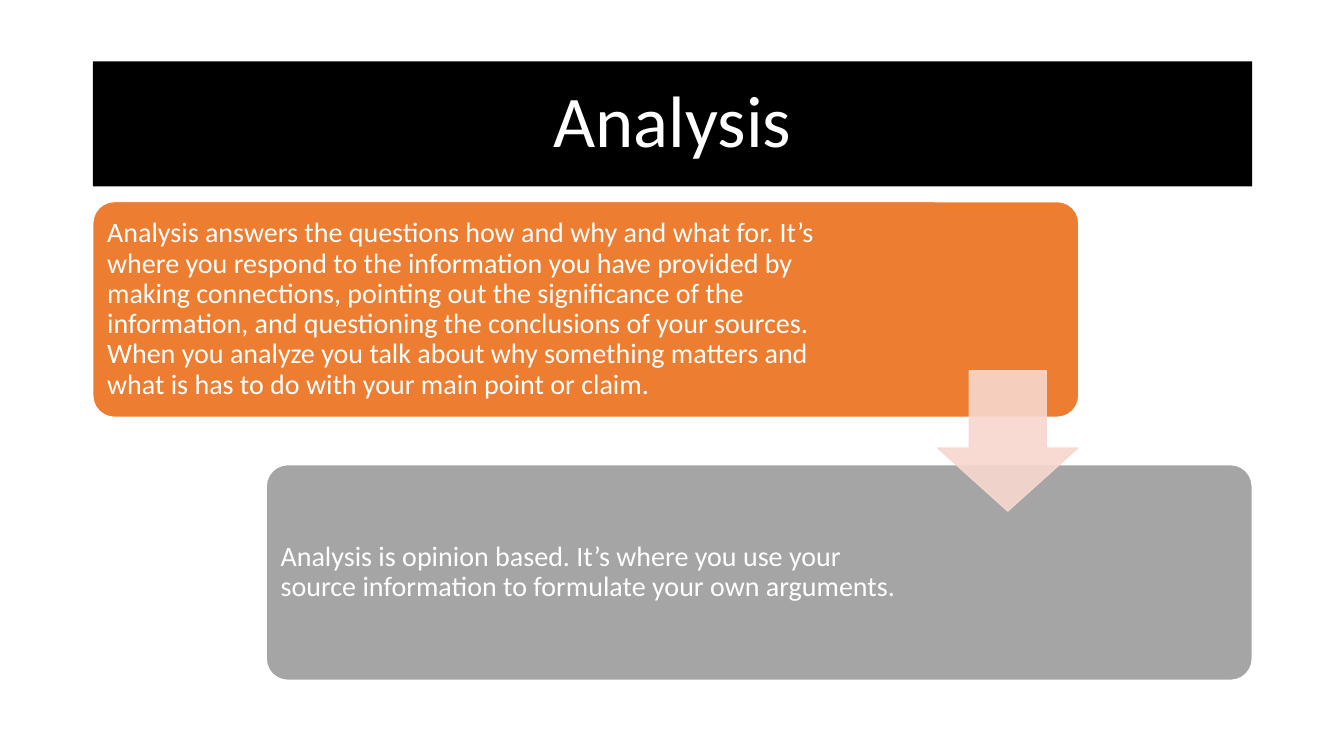
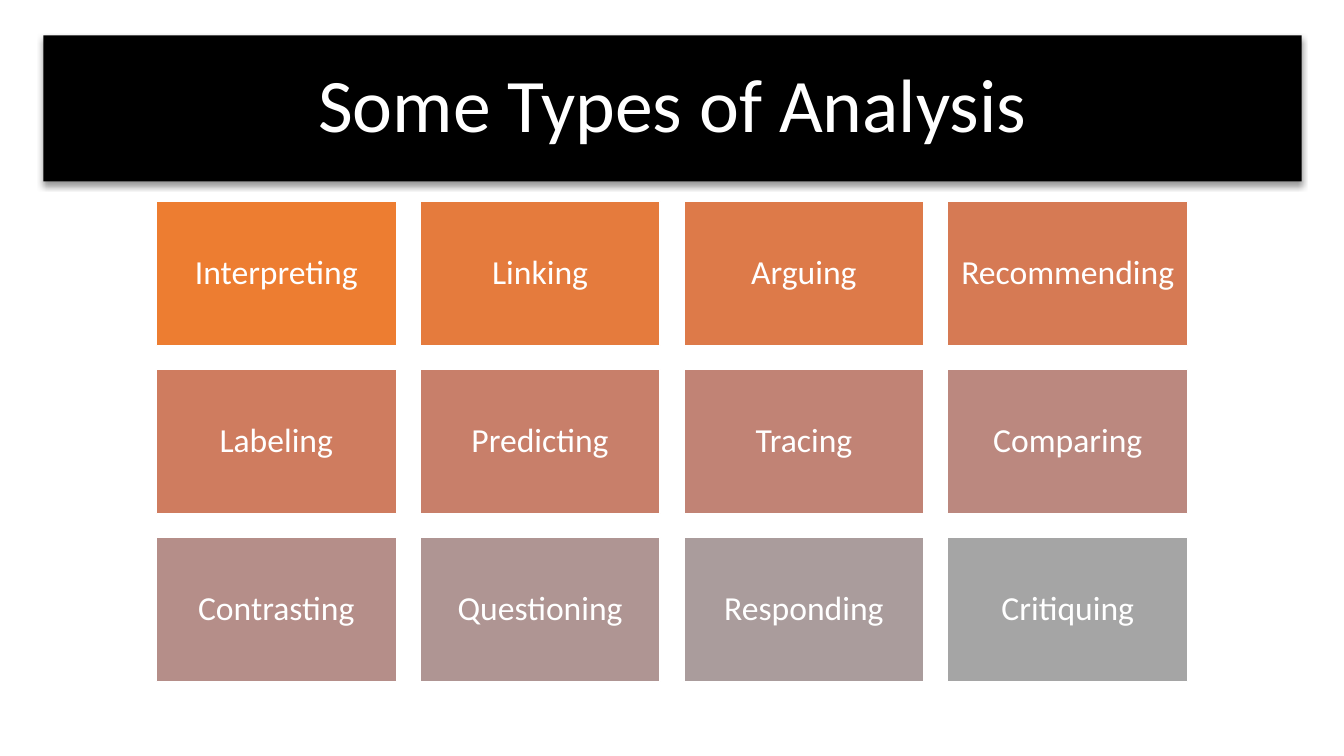
from colorsys import hls_to_rgb, rgb_to_hls
from dataclasses import dataclass

from lxml.etree import SubElement
from pptx import Presentation
from pptx.dml.color import RGBColor
from pptx.enum.shapes import MSO_SHAPE
from pptx.enum.text import MSO_ANCHOR, MSO_AUTO_SIZE, PP_ALIGN
from pptx.oxml.ns import qn
from pptx.util import Inches, Pt


@dataclass(frozen=True)
class Theme:
    font: str = "Calibri"
    band: RGBColor = RGBColor(0x00, 0x00, 0x00)
    white: RGBColor = RGBColor(0xFF, 0xFF, 0xFF)
    orange: RGBColor = RGBColor(0xED, 0x7D, 0x31)
    gray: RGBColor = RGBColor(0xA5, 0xA5, 0xA5)
    arrow: RGBColor = RGBColor(0xF8, 0xD7, 0xCE)
    card_size: int = 20
    tile_size: int = 24


theme = Theme()


def write(shape, text, size, align=PP_ALIGN.CENTER, margin=0.1, right=None):
    frame = shape.text_frame
    frame.auto_size = MSO_AUTO_SIZE.NONE
    frame.word_wrap = True
    frame.vertical_anchor = MSO_ANCHOR.MIDDLE
    frame.margin_left = frame.margin_top = frame.margin_bottom = Inches(margin)
    frame.margin_right = Inches(margin if right is None else right)
    para = frame.paragraphs[0]
    para.alignment = align
    para.line_spacing = 0.9
    span = para.add_run()
    span.text = text
    span.font.name = theme.font
    span.font.size = Pt(size)
    span.font.color.rgb = theme.white


def add_block(page, kind, bounds, color, line=theme.white):
    block = page.shapes.add_shape(kind, *map(Inches, bounds))
    block.shadow.inherit = False
    block.fill.solid()
    block.fill.fore_color.rgb = color
    block.line.color.rgb = line
    block.line.width = Pt(1)
    return block


deck = Presentation()
deck.slide_width = Inches(13.33)
deck.slide_height = Inches(7.5)

titles = [
    ("Analysis", 52, (0.92, 0.61, 11.5, 1.24)),
    ("Some Types of Analysis", 54, (0.43, 0.35, 12.48, 1.45)),
]
pages = []
for text, size, bounds in titles:
    page = deck.slides.add_slide(deck.slide_layouts[5])
    title = page.shapes.title
    title.left, title.top, title.width, title.height = map(Inches, bounds)
    title.fill.solid()
    title.fill.fore_color.rgb = theme.band
    write(title, text, size)
    pages.append(page)
analysis_page, types_page = pages

cards = [
    (
        "Analysis answers the questions how and why and what for. It’s where you respond "
        "to the information you have provided by making connections, pointing out the "
        "significance of the information, and questioning the conclusions of your sources. "
        "When you analyze you talk about why something matters and what is has to do with "
        "your main point or claim.",
        0.92, 2, theme.orange, 2.18,
    ),
    (
        "Analysis is opinion based. It’s where you use your source information to "
        "formulate your own arguments.",
        2.64, 4.61, theme.gray, 3.21,
    ),
]
for text, left, top, color, right in cards:
    card = add_block(analysis_page, MSO_SHAPE.ROUNDED_RECTANGLE, (left, top, 9.78, 2.14), color)
    card.adjustments[0] = 0.1
    write(card, text, theme.card_size, align=PP_ALIGN.LEFT, margin=0.08, right=right)

arrow = add_block(
    analysis_page, MSO_SHAPE.DOWN_ARROW, (9.3, 3.68, 1.39, 1.39), theme.arrow, line=theme.arrow
)
arrow.adjustments[0] = 0.55
arrow.adjustments[1] = 0.45
for color in arrow.element.spPr.iter(qn("a:srgbClr")):
    SubElement(color, qn("a:alpha"), val="90000")

effects = SubElement(types_page.shapes.title.element.spPr, qn("a:effectLst"))
shadow = SubElement(
    effects, qn("a:outerShdw"),
    blurRad=str(Pt(4)), dist=str(Pt(3)), dir="5400000", algn="t", rotWithShape="0",
)
shadow_color = SubElement(shadow, qn("a:srgbClr"), val=str(theme.band))
SubElement(shadow_color, qn("a:alpha"), val="40000")

types = [
    "Interpreting", "Linking", "Arguing", "Recommending",
    "Labeling", "Predicting", "Tracing", "Comparing",
    "Contrasting", "Questioning", "Responding", "Critiquing",
]
columns = 4
grid_left, grid_top, grid_width = 1.55, 2, 10.23
tile_width, tile_height = 2.38, 1.43
gap = (grid_width - columns * tile_width) / (columns - 1)
first, last = [
    rgb_to_hls(*(channel / 255 for channel in color)) for color in (theme.orange, theme.gray)
]
for index, text in enumerate(types):
    row, column = divmod(index, columns)
    share = index / (len(types) - 1)
    blend = hls_to_rgb(*(a + (b - a) * share for a, b in zip(first, last)))
    color = RGBColor(*(round(channel * 255) for channel in blend))
    left = grid_left + column * (tile_width + gap)
    top = grid_top + row * (tile_height + gap)
    tile = add_block(types_page, MSO_SHAPE.RECTANGLE, (left, top, tile_width, tile_height), color)
    write(tile, text, theme.tile_size)

deck.save("out.pptx")
